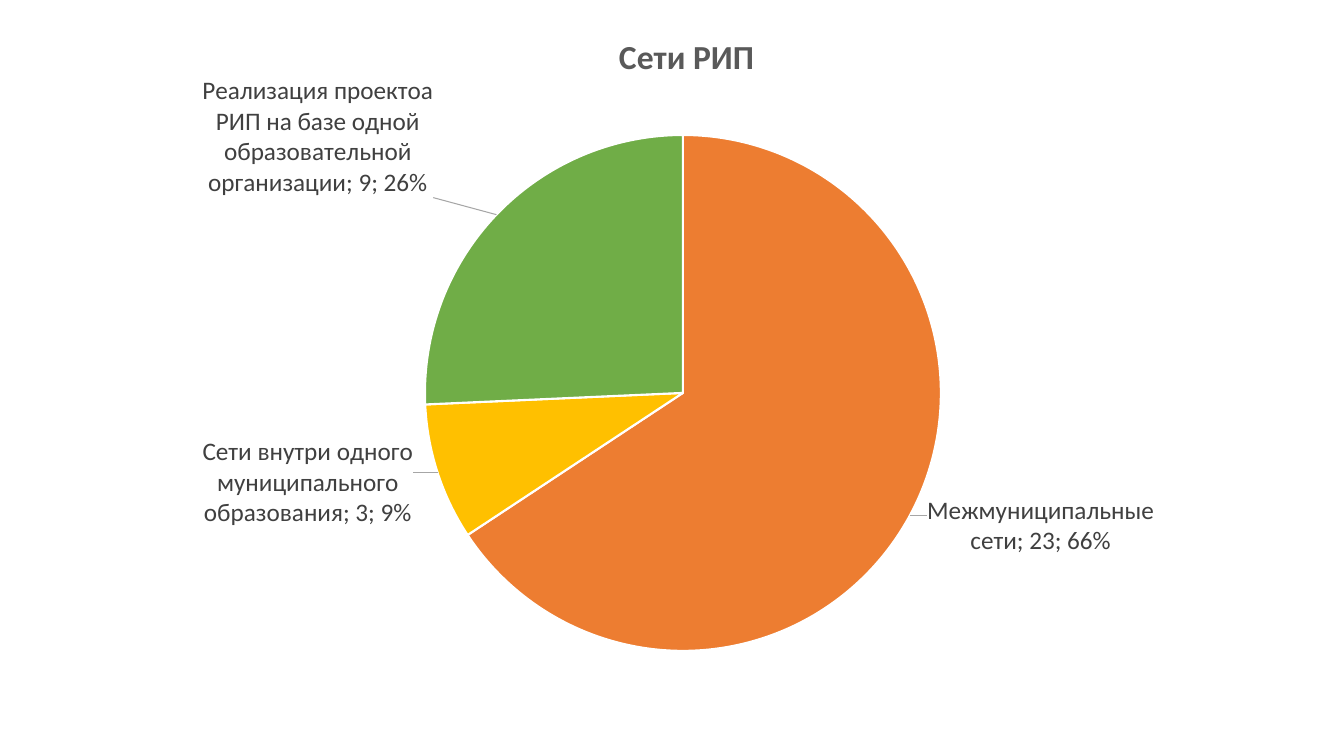
from lxml import etree
from pptx import Presentation
from pptx.chart.data import CategoryChartData
from pptx.dml.color import RGBColor
from pptx.enum.chart import XL_CHART_TYPE, XL_LABEL_POSITION
from pptx.oxml import parse_xml
from pptx.oxml.ns import qn
from pptx.util import Pt

# Content: name, value, colour, label shift (px), label size (px)
TITLE = "Сети РИП"
PARTS = [
    ("Межмуниципальные сети", 23, "orange", (12, -23), (240, 70)),
    ("Сети внутри одного муниципального образования", 3, "gold",
     (-19, -38), (230, 100)),
    ("Реализация проектоа РИП на базе одной образовательной организации", 9,
     "green", (-59, -13), (240, 130)),
]
COLORS = {"orange": "ED7D31", "gold": "FFC000", "green": "70AD47",
          "title": "595959", "label": "404040", "lead": "A6A6A6",
          "white": "FFFFFF"}
FONT = "Calibri"
WIDE, HIGH = 1344, 756
PX = 9071
PLOT = (425, 135, 516, 516)
HEAD = (613, 28)
NS = ('xmlns:c="http://schemas.openxmlformats.org/drawingml/2006/chart" '
      'xmlns:a="http://schemas.openxmlformats.org/drawingml/2006/main" '
      'xmlns:c15="http://schemas.microsoft.com/office/drawing/2012/chart"')


def color(name):
    return RGBColor.from_string(COLORS[name])


def style(font, size, name, bold):
    font.name, font.size, font.bold = FONT, Pt(size), bold
    font.color.rgb = color(name)


def layout(x, y, size=None, edge=False):
    """Manual layout as shares of the slide."""
    vals = [("x", x / WIDE), ("y", y / HIGH)]
    if size:
        vals += [("w", size[0] / WIDE), ("h", size[1] / HIGH)]
    tags = '<c:layoutTarget val="inner"/>' if size else ""
    if edge:
        tags += '<c:xMode val="edge"/><c:yMode val="edge"/>'
    tags += "".join(f'<c:{k} val="{v:.4f}"/>' for k, v in vals)
    return parse_xml(f"<c:layout {NS}><c:manualLayout>{tags}"
                     "</c:manualLayout></c:layout>")


def label(i, shift, size):
    """Label of one slice, with its own shift and size."""
    w, h = size[0] / WIDE, size[1] / HIGH
    shows = "".join(f'<c:show{k} val="{v}"/>' for k, v in (
        ("LegendKey", 0), ("Val", 1), ("CatName", 1), ("SerName", 0),
        ("Percent", 1), ("BubbleSize", 0)))
    item = parse_xml(
        f'<c:dLbl {NS}><c:idx val="{i}"/><c:dLblPos val="bestFit"/>{shows}'
        '<c:separator>; </c:separator><c:extLst>'
        '<c:ext uri="{CE6537A1-D6FC-4f65-9D91-7224C49458BB}">'
        f'<c15:layout><c:manualLayout><c:w val="{w:.4f}"/>'
        f'<c:h val="{h:.4f}"/></c:manualLayout></c15:layout>'
        '</c:ext></c:extLst></c:dLbl>')
    item.insert(1, layout(*shift))
    return item


# Slide and chart
deck = Presentation()
deck.slide_width, deck.slide_height = WIDE * PX, HIGH * PX
slide = deck.slides.add_slide(deck.slide_layouts[6])
data = CategoryChartData()
data.categories = [part[0] for part in PARTS]
data.add_series("Series 1", [part[1] for part in PARTS])
chart = slide.shapes.add_chart(XL_CHART_TYPE.PIE, 0, 0, WIDE * PX, HIGH * PX,
                               data).chart
chart.has_legend = False
chart.font.name, chart.font.size = FONT, Pt(10)

# Title
run = chart.chart_title.text_frame.paragraphs[0].add_run()
run.text = TITLE
style(run.font, 24, "title", True)
title = chart.chart_title._element
for old in title.findall(qn("c:layout")):
    title.remove(old)
title.find(qn("c:tx")).addnext(layout(*HEAD, edge=True))

# Plot area
area = chart._chartSpace.chart.plotArea
for old in area.findall(qn("c:layout")):
    area.remove(old)
area.insert(0, layout(*PLOT[:2], PLOT[2:], True))

# Slices
plot = chart.plots[0]
plot.vary_by_categories = True
row = plot.series[0]
for i, part in enumerate(PARTS):
    form = row.points[i].format
    form.fill.solid()
    form.fill.fore_color.rgb = color(part[2])
    form.line.color.rgb = color("white")
    form.line.width = Pt(1.5)

# Labels and leader lines
tags = row.data_labels
style(tags.font, 18, "label", False)
tags.show_value = tags.show_category_name = tags.show_percentage = True
tags.position = XL_LABEL_POSITION.BEST_FIT
root = tags._element
for i, part in enumerate(PARTS):
    item = label(i, *part[3:])
    item.find(qn("c:layout")).addnext(
        parse_xml(etree.tostring(root.find(qn("c:txPr")))))
    root.insert(i, item)
for old in root.findall(qn("c:showLeaderLines")):
    root.remove(old)
root.append(parse_xml(f"<c:separator {NS}>; </c:separator>"))
root.append(parse_xml(f'<c:showLeaderLines {NS} val="1"/>'))
root.append(parse_xml(
    f'<c:leaderLines {NS}><c:spPr><a:ln w="9525"><a:solidFill>'
    f'<a:srgbClr val="{COLORS["lead"]}"/></a:solidFill></a:ln></c:spPr>'
    "</c:leaderLines>"))

deck.save("out.pptx")
